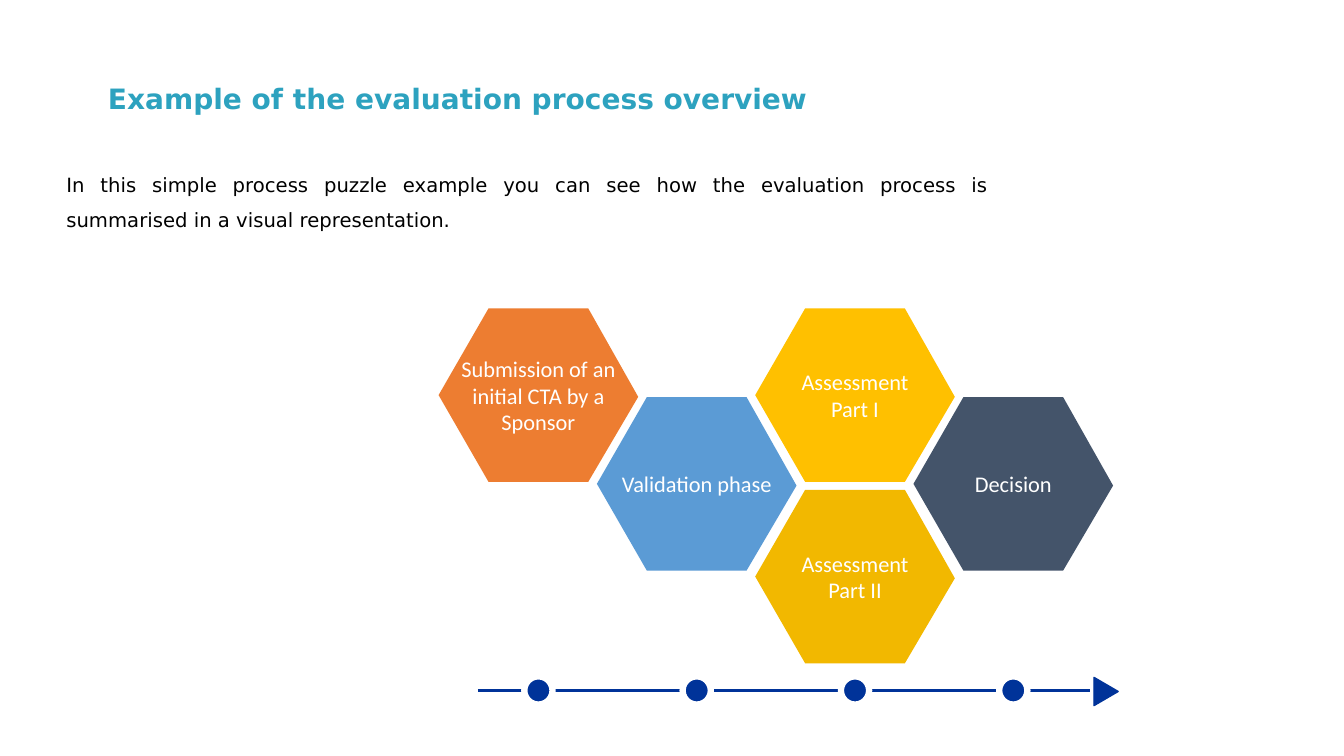
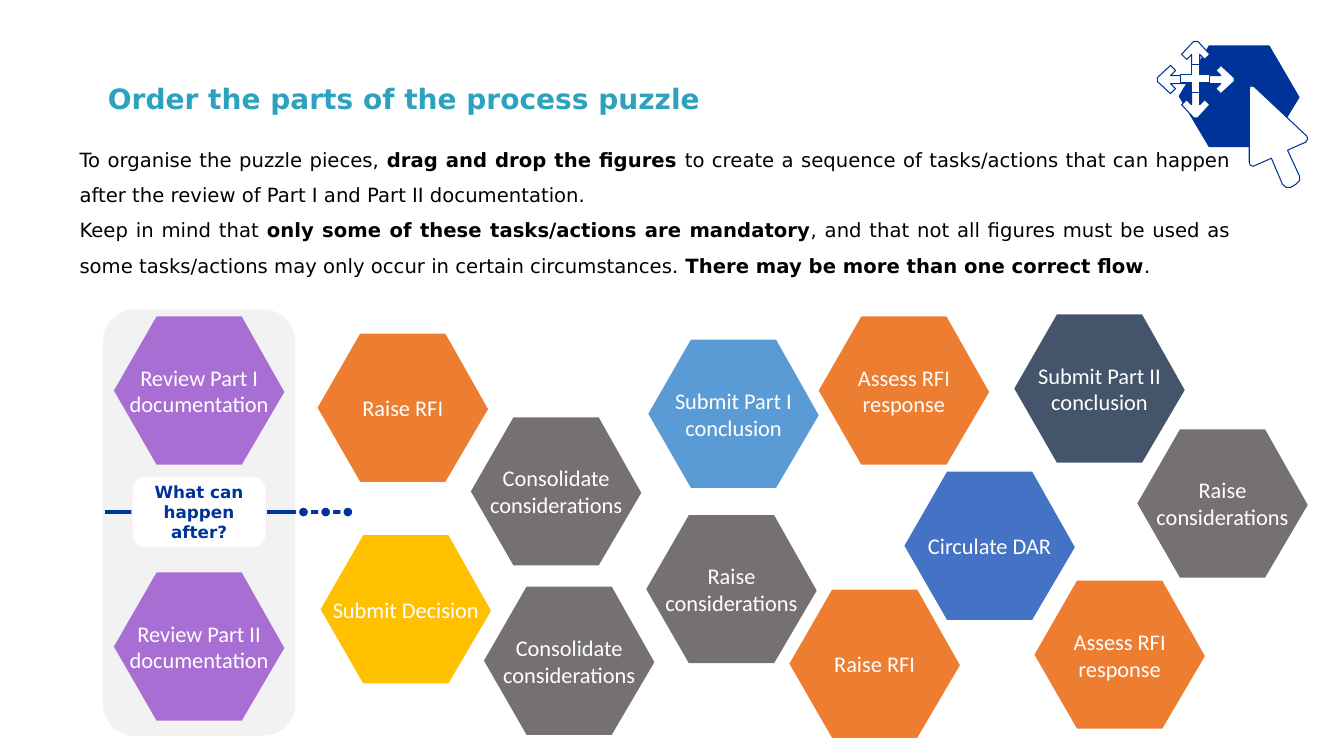
from lxml import etree
from pptx import Presentation
from pptx.dml.color import RGBColor
from pptx.enum.shapes import MSO_CONNECTOR, MSO_SHAPE
from pptx.enum.text import MSO_ANCHOR, PP_ALIGN
from pptx.oxml.ns import qn
from pptx.util import Inches, Pt

# Shared style
TEAL = RGBColor(0x2D, 0xA2, 0xBF)
NAVY = RGBColor(0x00, 0x33, 0x99)
BLACK = RGBColor(0x00, 0x00, 0x00)
WHITE = RGBColor(0xFF, 0xFF, 0xFF)
PALE = RGBColor(0xF2, 0xF2, 0xF2)
SLATE = RGBColor(0x44, 0x54, 0x6A)
SKY = RGBColor(0x5B, 0x9B, 0xD5)
BLUE = RGBColor(0x44, 0x72, 0xC4)
ORANGE = RGBColor(0xED, 0x7D, 0x31)
YELLOW = RGBColor(0xFF, 0xC0, 0x00)
GOLD = RGBColor(0xF2, 0xB8, 0x00)
GREY = RGBColor(0x76, 0x71, 0x71)
PURPLE = RGBColor(0xA8, 0x6E, 0xD4)
BODY_FONT, HEX_FONT = "DejaVu Sans", "Calibri"
HEX_OUTLINE = [(0.25, 0), (0.75, 0), (1, 0.51), (0.75, 1), (0.25, 1), (0, 0.5)]

# Slide 1 content: label, colour, column, row
OVERVIEW_TITLE = "Example of the evaluation process overview"
OVERVIEW_TEXT = [[("In this simple process puzzle example you can see how the evaluation "
                   "process is summarised in a visual representation.", False)]]
OVERVIEW_STEPS = [
    ("Decision", SLATE, 3, 1),
    ("Validation phase", SKY, 1, 1),
    ("Submission of an initial CTA by a Sponsor", ORANGE, 0, 0),
    ("Assessment\nPart I", YELLOW, 2, 0),
    ("Assessment\nPart II", GOLD, 2, 2),
]
STEP_LEFT, STEP_PITCH, STEP_ROWS = 4.35, 1.57, (3.06, 3.94, 4.86)
STEP_SIZE = (1.98, 1.72)
TIMELINE_Y = 6.85

# Slide 2 content: label, colour, left, top
PUZZLE_TITLE = "Order the parts of the process puzzle"
PUZZLE_TEXT = [
    [("To organise the puzzle pieces, ", False),
     ("drag and drop the figures ", True),
     ("to create a sequence of tasks/actions that can happen after the review "
      "of Part I and Part II documentation.", False)],
    [("Keep in mind that ", False),
     ("only some of these tasks/actions are mandatory", True),
     (", and that not all figures must be used as some tasks/actions may only "
      "occur in certain circumstances. ", False),
     ("There may be more than one correct flow", True),
     (".", False)],
]
PIECES = [
    ("Submit Part II conclusion", SLATE, 10.06, 3.12),
    ("Submit Part I conclusion", SKY, 6.43, 3.37),
    ("Raise RFI", ORANGE, 3.15, 3.31),
    ("Submit Decision", YELLOW, 3.18, 5.31),
    ("Circulate DAR", BLUE, 8.97, 4.68),
    ("Consolidate considerations", GREY, 4.8, 5.82),
    ("Raise considerations", GREY, 11.28, 4.26),
    ("Assess RFI response", ORANGE, 8.12, 3.14),
    ("Raise RFI", ORANGE, 7.83, 5.85),
    ("Consolidate considerations", GREY, 4.67, 4.14),
    ("Raise considerations", GREY, 6.41, 5.11),
    ("Assess RFI response", ORANGE, 10.26, 5.76),
    ("Review Part I documentation", PURPLE, 1.13, 3.14),
    ("Review Part II documentation", PURPLE, 1.13, 5.68),
]
PIECE_SIZE = (1.69, 1.47)
LINK_Y = 5.08

# Drag-and-drop icon
MOVE_CENTRE = (11.86, 0.79)
MOVE_ARM = [(0.04, -0.04), (0.25, -0.04), (0.2, -0.09), (0.25, -0.14), (0.38, -0.02),
            (0.38, 0.02), (0.25, 0.14), (0.2, 0.09), (0.25, 0.04)]
CURSOR = [(12.4, 0.85), (12.44, 0.86), (12.96, 1.35), (12.97, 1.38), (12.95, 1.41),
          (12.77, 1.49), (12.89, 1.75), (12.89, 1.79), (12.85, 1.83), (12.8, 1.86),
          (12.76, 1.86), (12.72, 1.83), (12.61, 1.57), (12.43, 1.65), (12.4, 1.64),
          (12.39, 1.61), (12.39, 0.89)]


def paint(sp, fill, line=None, width=1):
    sp.shadow.inherit = False
    sp.fill.solid()
    sp.fill.fore_color.rgb = fill
    if line is None:
        sp.line.fill.background()
    else:
        sp.line.color.rgb = line
        sp.line.width = Pt(width)
    return sp


def style_run(r, font, size, color, bold=False):
    r.font.name, r.font.size, r.font.bold = font, Pt(size), bold
    r.font.color.rgb = color


def label(sp, text, font, size, color, bold=False):
    tf = sp.text_frame
    tf.word_wrap = True
    tf.vertical_anchor = MSO_ANCHOR.MIDDLE
    tf.text = text
    for p in tf.paragraphs:
        p.alignment = PP_ALIGN.CENTER
        for r in p.runs:
            style_run(r, font, size, color, bold)


def add_preset(shapes, kind, left, top, width, height, fill, line=None, line_width=1):
    sp = shapes.add_shape(kind, Inches(left), Inches(top), Inches(width), Inches(height))
    return paint(sp, fill, line, line_width)


def add_outline(shapes, points, fill, line=None, width=1):
    pts = [(Inches(x), Inches(y)) for x, y in points]
    builder = shapes.build_freeform(*pts[0])
    builder.add_line_segments(pts[1:], close=True)
    return paint(builder.convert_to_shape(), fill, line, width)


def add_hexagon(shapes, left, top, size, fill, text=None):
    w, h = size
    sp = add_outline(shapes, [(left + x * w, top + y * h) for x, y in HEX_OUTLINE], fill)
    if text:
        label(sp, text, HEX_FONT, 16, WHITE)


def add_track(shapes, x1, x2, y, dots, diameter, gap):
    """Horizontal line with white-ringed dots centred on it."""
    line = shapes.add_connector(MSO_CONNECTOR.STRAIGHT, Inches(x1), Inches(y),
                                Inches(x2), Inches(y))
    line.line.color.rgb = NAVY
    line.line.width = Pt(2.25)
    etree.SubElement(line._element.spPr, qn("a:effectLst"))
    for x in dots:
        add_preset(shapes, MSO_SHAPE.OVAL, x - diameter / 2, y - diameter / 2,
                   diameter, diameter, NAVY, WHITE, gap)


def add_title_slide(prs, title):
    s = prs.slides.add_slide(prs.slide_layouts[5])
    sp = s.shapes.title
    sp.left, sp.top, sp.width, sp.height = map(Inches, (0.97, 0.76, 9.09, 0.44))
    tf = sp.text_frame
    tf.text = title
    tf.word_wrap = True
    tf.vertical_anchor = MSO_ANCHOR.TOP
    p = tf.paragraphs[0]
    p.alignment = PP_ALIGN.LEFT
    style_run(p.runs[0], BODY_FONT, 20, TEAL, True)
    return s.shapes


def add_body(shapes, left, top, width, height, paragraphs):
    tf = shapes.add_textbox(*map(Inches, (left, top, width, height))).text_frame
    tf.word_wrap = True
    for i, parts in enumerate(paragraphs):
        p = tf.add_paragraph() if i else tf.paragraphs[0]
        p.alignment = PP_ALIGN.JUSTIFY
        p.line_spacing = 1.5
        for text, bold in parts:
            r = p.add_run()
            r.text = text
            style_run(r, BODY_FONT, 14, BLACK, bold)


def add_drag_icon(shapes):
    icon = shapes.add_group_shape().shapes
    add_hexagon(icon, 11.69, 0.45, (1.2, 1.01), NAVY)
    # Four-way arrow: one arm turned by quarter circles
    arm, outline = MOVE_ARM, []
    cx, cy = MOVE_CENTRE
    for _ in range(4):
        outline += [(cx + x, cy + y) for x, y in arm]
        arm = [(-y, x) for x, y in arm]
    add_outline(icon, outline, WHITE, NAVY, 0)
    plus = add_preset(icon, MSO_SHAPE.CROSS, 11.71, 0.64, 0.29, 0.28, WHITE, NAVY, 0)
    plus.adjustments[0] = 0.37
    add_outline(icon, CURSOR, WHITE, NAVY, 0.75)


def build_overview(prs):
    shapes = add_title_slide(prs, OVERVIEW_TITLE)
    add_body(shapes, 0.56, 1.55, 9.34, 1.14, OVERVIEW_TEXT)
    for text, color, col, row in OVERVIEW_STEPS:
        add_hexagon(shapes, STEP_LEFT + col * STEP_PITCH, STEP_ROWS[row],
                    STEP_SIZE, color, text)
    # Timeline with one dot under each column
    first = STEP_LEFT + STEP_SIZE[0] / 2
    dots = [first + col * STEP_PITCH for col in range(4)]
    add_track(shapes, 4.74, 10.81, TIMELINE_Y, dots, 0.28, 4.5)
    tip = add_preset(shapes, MSO_SHAPE.ISOSCELES_TRIANGLE, 10.83, 6.74, 0.28, 0.24, NAVY, NAVY)
    tip.rotation = 90


def build_puzzle(prs):
    shapes = add_title_slide(prs, PUZZLE_TITLE)
    add_preset(shapes, MSO_SHAPE.ROUNDED_RECTANGLE, 1.02, 3.07, 1.91, 4.23, PALE)
    add_body(shapes, 0.69, 1.3, 11.61, 1.51, PUZZLE_TEXT)
    for text, color, left, top in PIECES:
        add_hexagon(shapes, left, top, PIECE_SIZE, color, text)
    # Link from the starting pieces to the open question
    dots = [3.01 + i * 0.22 for i in range(3)]
    add_track(shapes, 1.04, 3.44, LINK_Y, dots, 0.12, 2.25)
    add_drag_icon(shapes)
    box = add_preset(shapes, MSO_SHAPE.ROUNDED_RECTANGLE, 1.31, 4.73, 1.33, 0.7, WHITE, PALE)
    label(box, "What can happen after?", BODY_FONT, 12, NAVY, True)


def main():
    prs = Presentation()
    prs.slide_width, prs.slide_height = Inches(13.33), Inches(7.5)
    build_overview(prs)
    build_puzzle(prs)
    prs.save("out.pptx")


if __name__ == "__main__":
    main()
